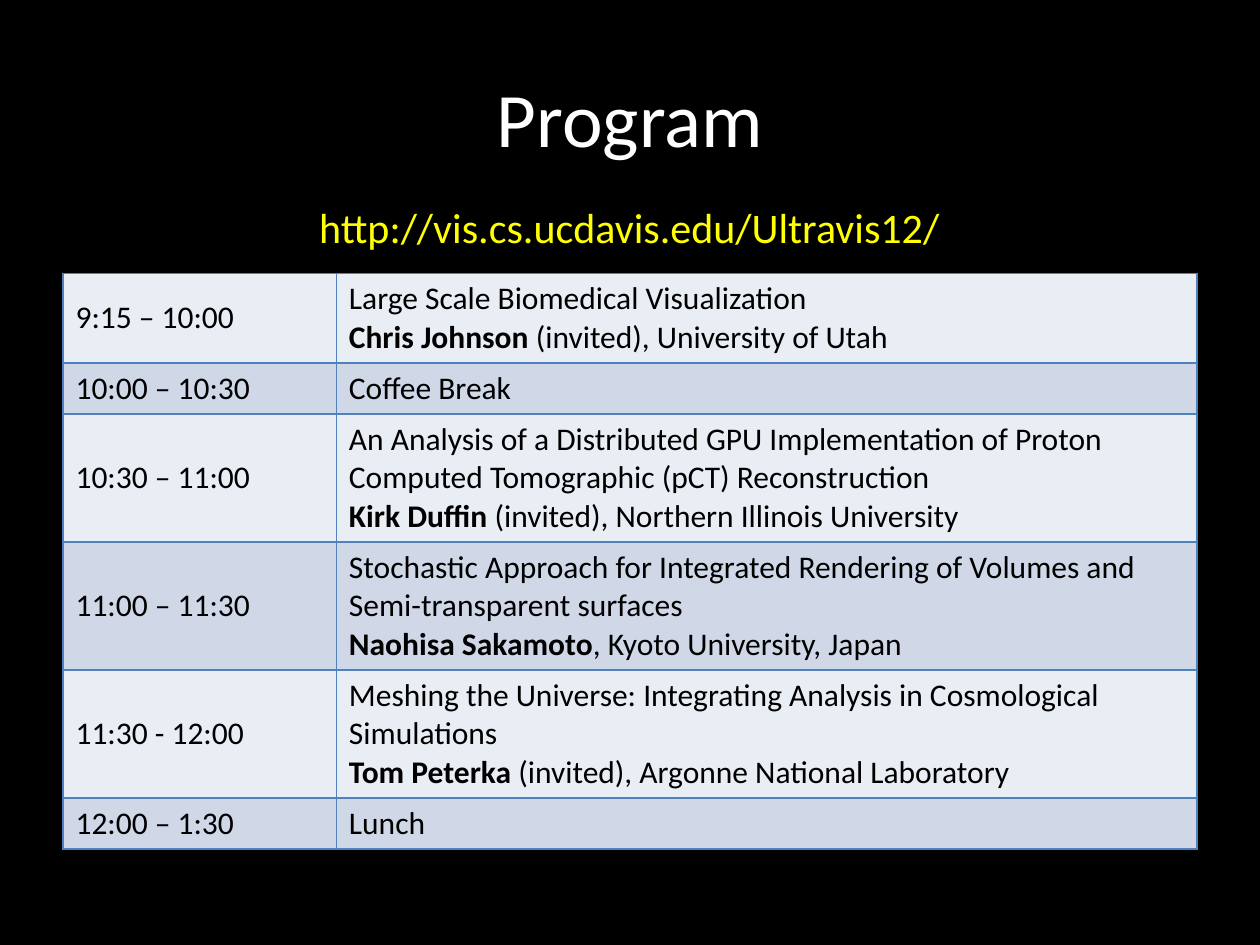
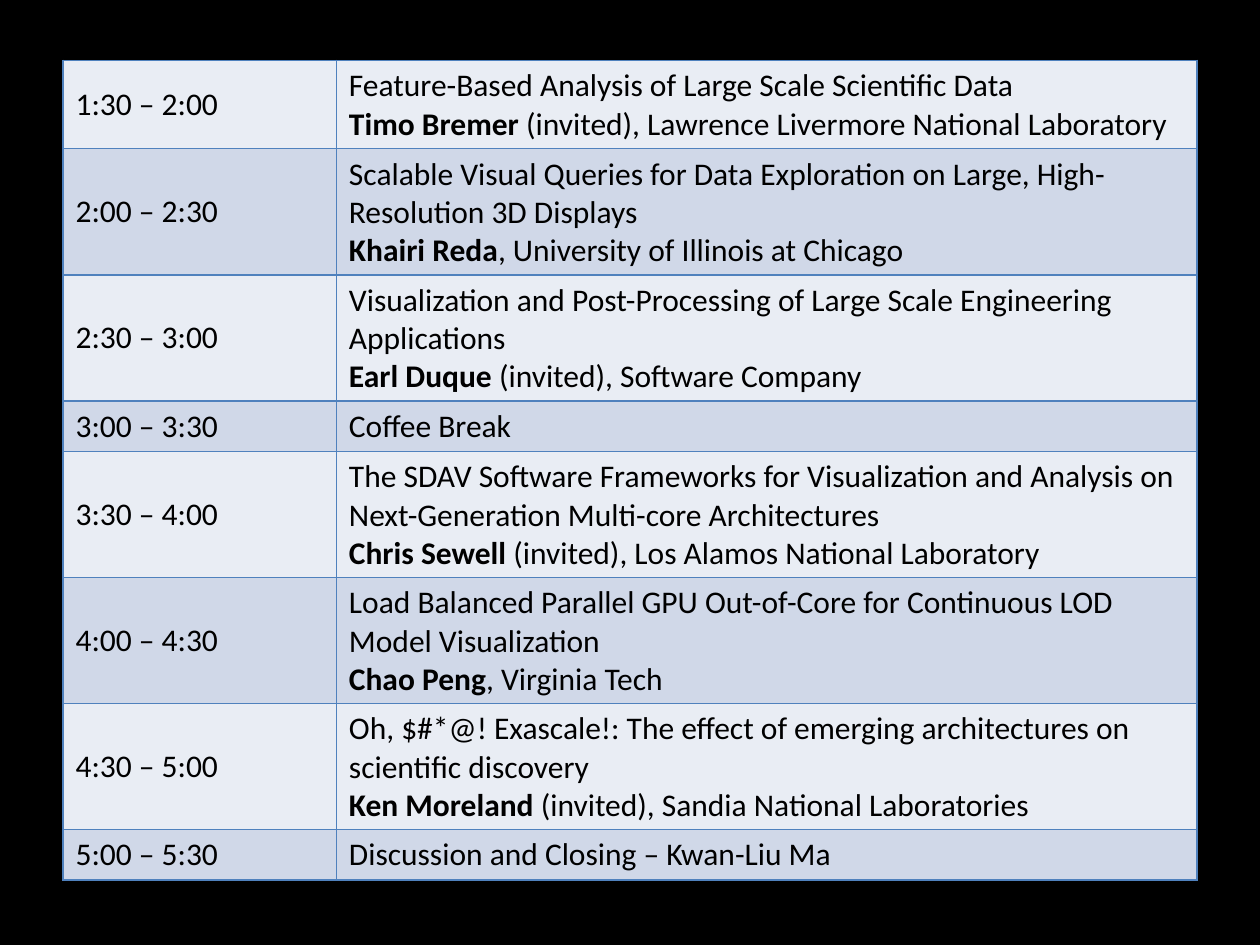
from dataclasses import dataclass
from math import ceil

from lxml.etree import SubElement
from pptx import Presentation
from pptx.dml.color import RGBColor
from pptx.enum.text import MSO_ANCHOR, PP_ALIGN
from pptx.oxml.ns import qn
from pptx.util import Inches, Pt


@dataclass(frozen=True)
class Theme:
    """Colours, font and type sizes shared by the slides."""

    font: str = "Calibri"
    background: str = "000000"
    title: str = "FFFFFF"
    address: str = "FFFF00"
    ink: str = "000000"
    border: str = "4F81BD"
    bands: tuple = ("E9EDF4", "D0D8E8")
    title_size: int = 44
    address_size: int = 24
    table_size: int = 18


THEME = Theme()
COLUMNS = (2.17, 6.83)
LINE_HEIGHT = 0.3
ROW_PADDING = 0.1
CHARACTERS_PER_LINE = 62

MORNING = [
    ("9:15 – 10:00", ["Large Scale Biomedical Visualization"],
     "Chris Johnson", " (invited), University of Utah"),
    ("10:00 – 10:30", ["Coffee Break"]),
    ("10:30 – 11:00",
     ["An Analysis of a Distributed GPU Implementation of Proton Computed Tomographic (pCT) Reconstruction"],
     "Kirk Duffin", " (invited), Northern Illinois University"),
    ("11:00 – 11:30",
     ["Stochastic Approach for Integrated Rendering of Volumes and", "Semi-transparent surfaces"],
     "Naohisa Sakamoto", ", Kyoto University, Japan"),
    ("11:30 - 12:00", ["Meshing the Universe: Integrating Analysis in Cosmological Simulations"],
     "Tom Peterka", " (invited), Argonne National Laboratory"),
    ("12:00 – 1:30", ["Lunch"]),
]

AFTERNOON = [
    ("1:30 – 2:00", ["Feature-Based Analysis of Large Scale Scientific Data"],
     "Timo Bremer", " (invited), Lawrence Livermore National Laboratory"),
    ("2:00 – 2:30",
     ["Scalable Visual Queries for Data Exploration on Large, High-Resolution 3D Displays"],
     "Khairi Reda", ", University of Illinois at Chicago"),
    ("2:30 – 3:00",
     ["Visualization and Post-Processing of Large Scale Engineering Applications"],
     "Earl Duque", " (invited), Software Company"),
    ("3:00 – 3:30", ["Coffee Break"]),
    ("3:30 – 4:00",
     ["The SDAV Software Frameworks for Visualization and Analysis on Next-Generation Multi-core Architectures"],
     "Chris Sewell", " (invited), Los Alamos National Laboratory"),
    ("4:00 – 4:30",
     ["Load Balanced Parallel GPU Out-of-Core for Continuous LOD Model Visualization"],
     "Chao Peng", ", Virginia Tech"),
    ("4:30 – 5:00",
     ["Oh, $#*@! Exascale!: The effect of emerging architectures on scientific discovery"],
     "Ken Moreland", " (invited), Sandia National Laboratories"),
    ("5:00 – 5:30", ["Discussion and Closing – Kwan-Liu Ma"]),
]


def write(frame, paragraphs, size, color, align=PP_ALIGN.LEFT):
    """Fill a text frame with paragraphs, each a list of (text, bold) spans."""
    for index, spans in enumerate(paragraphs):
        para = frame.add_paragraph() if index else frame.paragraphs[0]
        para.alignment = align
        for text, bold in spans:
            span = para.add_run()
            span.text = text
            span.font.name = THEME.font
            span.font.size = Pt(size)
            span.font.bold = bold
            span.font.color.rgb = RGBColor.from_string(color)


def place(shape, box):
    """Move a shape to a box of left, top, width and height in inches."""
    shape.left, shape.top, shape.width, shape.height = map(Inches, box)


def add_title(page, text, box):
    """Write the slide title in its placeholder."""
    title = page.shapes.title
    place(title, box)
    title.text_frame.vertical_anchor = MSO_ANCHOR.MIDDLE
    write(title.text_frame, [[(text, False)]], THEME.title_size, THEME.title, PP_ALIGN.CENTER)


def add_address(page, text, box):
    """Add the centred web address."""
    frame = page.shapes.add_textbox(*map(Inches, box)).text_frame
    frame.word_wrap = True
    write(frame, [[(text, False)]], THEME.address_size, THEME.address, PP_ALIGN.CENTER)


def add_borders(cell):
    """Draw a thin line on the four sides of a cell."""
    properties = cell._tc.get_or_add_tcPr()
    for side in ("a:lnL", "a:lnR", "a:lnT", "a:lnB"):
        line = SubElement(properties, qn(side), w=str(Pt(1)))
        fill = SubElement(line, qn("a:solidFill"))
        SubElement(fill, qn("a:srgbClr"), val=THEME.border)


def fill_cell(cell, paragraphs, band):
    """Write and colour one cell of the schedule."""
    add_borders(cell)
    cell.fill.solid()
    cell.fill.fore_color.rgb = RGBColor.from_string(band)
    write(cell.text_frame, paragraphs, THEME.table_size, THEME.ink)


def session_paragraphs(topics, speaker="", affiliation=""):
    """Return the topic lines, then the speaker in bold with the affiliation."""
    paragraphs = [[(topic, False)] for topic in topics]
    if speaker:
        paragraphs.append([(speaker, True), (affiliation, False)])
    return paragraphs


def row_height(paragraphs):
    """Return the height in inches that the wrapped paragraphs need."""
    lengths = [sum(len(text) for text, _ in spans) for spans in paragraphs]
    lines = sum(ceil(length / CHARACTERS_PER_LINE) for length in lengths)
    return ROW_PADDING + LINE_HEIGHT * lines


def add_schedule(page, sessions, left, top):
    """Add a banded table of times and sessions."""
    details = [session_paragraphs(*session[1:]) for session in sessions]
    heights = [row_height(paragraphs) for paragraphs in details]
    box = (left, top, sum(COLUMNS), sum(heights))
    table = page.shapes.add_table(len(sessions), len(COLUMNS), *map(Inches, box)).table
    table.first_row = table.horz_banding = False
    for column, width in zip(table.columns, COLUMNS):
        column.width = Inches(width)
    for index, (session, paragraphs) in enumerate(zip(sessions, details)):
        table.rows[index].height = Inches(heights[index])
        band = THEME.bands[index % len(THEME.bands)]
        time = table.cell(index, 0)
        fill_cell(time, [[(session[0], False)]], band)
        time.vertical_anchor = MSO_ANCHOR.MIDDLE
        fill_cell(table.cell(index, 1), paragraphs, band)


def add_morning_page(deck):
    """Add the titled page with the morning sessions."""
    page = deck.slides.add_slide(deck.slide_layouts.get_by_name("Title Only"))
    add_title(page, "Program", (0.5, 0.3, 9, 1.25))
    add_schedule(page, MORNING, 0.5, 2.17)
    add_address(page, "http://vis.cs.ucdavis.edu/Ultravis12/", (2.15, 1.55, 5.69, 0.5))


def add_afternoon_page(deck):
    """Add the page with the afternoon sessions."""
    page = deck.slides.add_slide(deck.slide_layouts.get_by_name("Blank"))
    add_schedule(page, AFTERNOON, 0.5, 0.48)


def main():
    """Build and save the program slides."""
    deck = Presentation()
    deck.slide_width, deck.slide_height = Inches(10), Inches(7.5)
    backdrop = deck.slide_master.background.fill
    backdrop.solid()
    backdrop.fore_color.rgb = RGBColor.from_string(THEME.background)
    add_morning_page(deck)
    add_afternoon_page(deck)
    deck.save("out.pptx")


if __name__ == "__main__":
    main()
